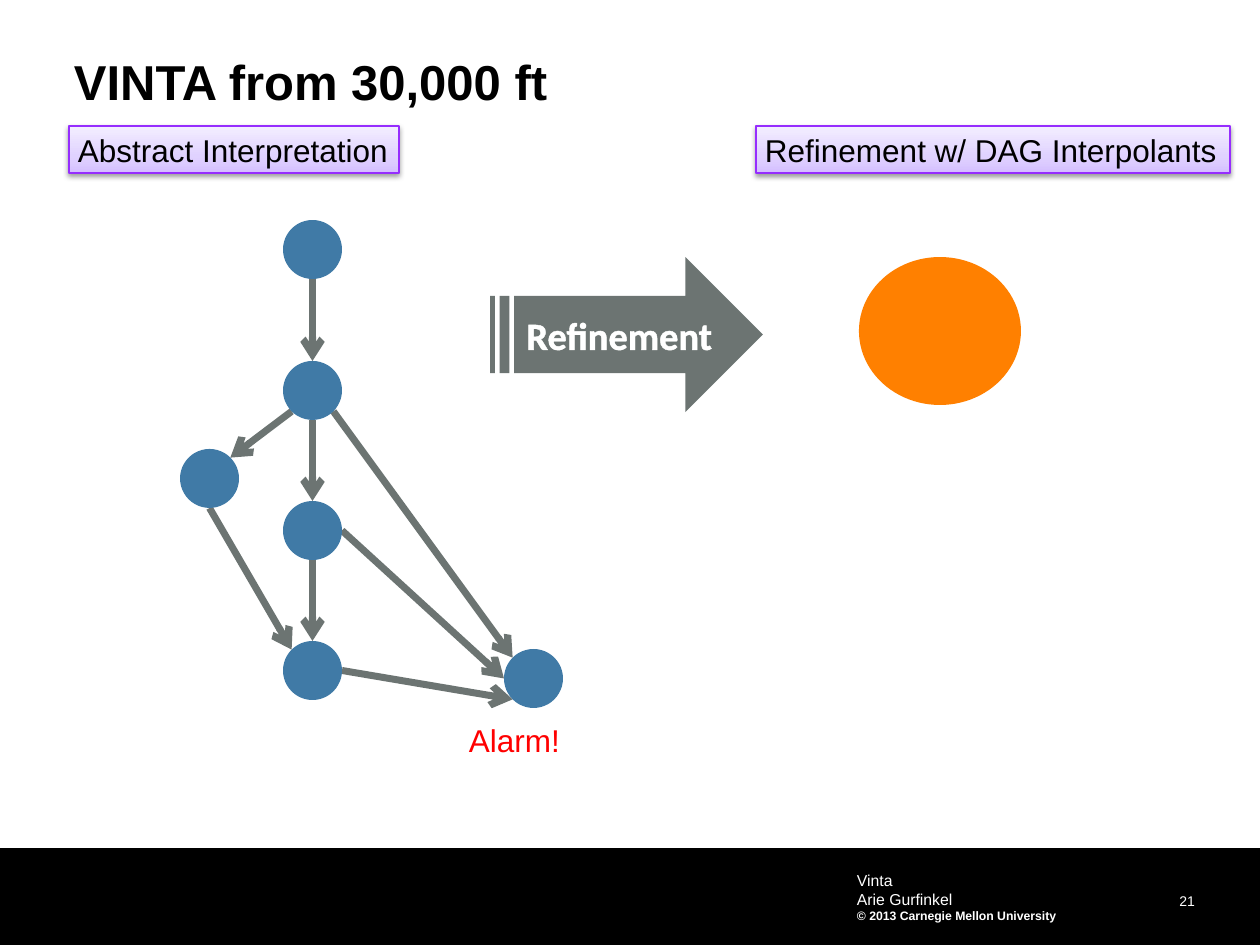
import math
from lxml import etree
from pptx import Presentation, util as u
from pptx.dml.color import RGBColor
from pptx.enum import shapes, text
from pptx.oxml import parse_xml
from pptx.oxml.ns import nsdecls, qn

PX = u.Inches(1) / 126
COLORS = {
    "black": "000000", "white": "FFFFFF", "red": "FF0000",
    "node": "407AA6", "gray": "6C7472", "orange": "FF8000",
    "violet": "962DFE",
}
LABEL_GRADIENT = [(0, "D4BFFF"), (35, "E0D2FF"), (100, "F3EEFF")]

TITLE = "VINTA from 30,000 ft"
LABELS = [
    ("Abstract Interpretation", (69, 126, 330, 47)),
    ("Refinement w/ DAG Interpolants", (756, 126, 474, 47)),
]
FOOTER = [("Vinta", 9, False), ("Arie Gurfinkel", 9, False),
          ("© 2013 Carnegie Mellon University", 7, True)]

NODE_SIZE = 59
NODES = {  # left, top
    "entry": (283, 220), "branch": (283, 361), "middle": (283, 501),
    "join": (283, 641), "side": (180, 449), "alarm": (504, 649),
}
# Rim points as degrees clockwise from the right of a node
RIGHT, LOWER_RIGHT, BOTTOM, LOWER_LEFT = 0, 45, 90, 135
LEFT, UPPER_LEFT, TOP, UPPER_RIGHT = 180, 225, 270, 315
EDGES = [
    ("entry", BOTTOM, "branch", TOP),
    ("branch", BOTTOM, "middle", TOP),
    ("middle", BOTTOM, "join", TOP),
    ("branch", LOWER_RIGHT, "alarm", UPPER_LEFT),
    ("middle", RIGHT, "alarm", LEFT),
    ("join", RIGHT, "alarm", LOWER_LEFT),
    ("branch", LOWER_LEFT, "side", UPPER_RIGHT),
    ("side", BOTTOM, "join", UPPER_LEFT),
]


def emu(*lengths):
    return [round(length * PX) for length in lengths]


def color(name):
    return RGBColor.from_string(COLORS[name])


def add_solid(slide, kind, box, fill):
    solid = slide.shapes.add_shape(kind, *emu(*box))
    solid.shadow.inherit = False
    solid.fill.solid()
    solid.fill.fore_color.rgb = color(fill)
    solid.line.fill.background()
    return solid


def write(shape, lines, ink="black", font="Arial", align=text.PP_ALIGN.LEFT,
          anchor=text.MSO_ANCHOR.TOP, insets=(9, 5), wrap=True, spacing=None):
    """Fill a shape with lines given as (wording, point size, bold)."""
    frame = shape.text_frame
    frame.word_wrap = wrap
    frame.vertical_anchor = anchor
    frame.margin_left, frame.margin_top = emu(*insets)
    frame.margin_right, frame.margin_bottom = emu(*insets)
    for i, (wording, size, bold) in enumerate(lines):
        paragraph = frame.paragraphs[0] if i == 0 else frame.add_paragraph()
        paragraph.alignment = align
        paragraph.line_spacing = spacing
        run = paragraph.add_run()
        run.text = wording
        run.font.name, run.font.size, run.font.bold = font, u.Pt(size), bold
        run.font.color.rgb = color(ink)


def add_text(slide, box, lines, **style):
    write(slide.shapes.add_textbox(*emu(*box)), lines, **style)


def add_label(slide, wording, box):
    label = add_solid(slide, shapes.MSO_SHAPE.RECTANGLE, box, "white")
    label.line.color.rgb = color("violet")
    label.line.width = u.Pt(0.75)
    stops = "".join(f'<a:gs pos="{pos * 1000}"><a:srgbClr val="{shade}"/></a:gs>'
                    for pos, shade in LABEL_GRADIENT)
    properties = label._element.spPr
    properties.replace(properties.find(qn("a:solidFill")), parse_xml(
        f'<a:gradFill {nsdecls("a")} rotWithShape="1"><a:gsLst>{stops}</a:gsLst>'
        '<a:lin ang="16200000" scaled="0"/></a:gradFill>'))
    properties.find(qn("a:effectLst")).append(parse_xml(
        f'<a:outerShdw {nsdecls("a")} blurRad="{u.Pt(3.1)}" dist="{u.Pt(1.6)}" '
        'dir="5400000" rotWithShape="0"><a:srgbClr val="000000">'
        '<a:alpha val="38000"/></a:srgbClr></a:outerShdw>'))
    write(label, [(wording, 18, False)], wrap=False)


def rim_point(node, degrees):
    radius = NODE_SIZE / 2
    angle = math.radians(degrees)
    left, top = NODES[node]
    return (left + radius + radius * math.cos(angle),
            top + radius + radius * math.sin(angle))


def add_edge(slide, source, leaving, target, entering):
    edge = slide.shapes.add_connector(
        shapes.MSO_CONNECTOR.STRAIGHT,
        *emu(*rim_point(source, leaving), *rim_point(target, entering)))
    edge.line.color.rgb = color("gray")
    edge.line.width = u.Pt(4)
    etree.SubElement(edge.line._get_or_add_ln(), qn("a:tailEnd"), type="arrow")
    etree.SubElement(edge._element.spPr, qn("a:effectLst"))


def outline_text(shape, ink):
    properties = shape.text_frame.paragraphs[0].runs[0].font._element
    properties.insert(0, parse_xml(
        f'<a:ln {nsdecls("a")} w="{u.Pt(0.75)}"><a:solidFill>'
        f'<a:srgbClr val="{COLORS[ink]}"/></a:solidFill></a:ln>'))


def main():
    deck = Presentation()
    deck.slide_width, deck.slide_height = emu(1260, 945)
    slide = deck.slides.add_slide(deck.slide_layouts[6])
    kinds, middle = shapes.MSO_SHAPE, text.MSO_ANCHOR.MIDDLE

    add_solid(slide, kinds.RECTANGLE, (0, 848, 1260, 97), "black")
    add_text(slide, (1079, 886, 116, 23), [("21", 8, False)], ink="white",
             align=text.PP_ALIGN.RIGHT, anchor=middle, insets=(0, 0),
             spacing=u.Pt(13))
    add_text(slide, (851, 864, 315, 66), FOOTER, ink="white", anchor=middle,
             insets=(6, 6))
    add_text(slide, (74, 58, 1124, 53), [(TITLE, 28, True)], insets=(0, 0),
             spacing=0.9)

    for edge in EDGES:
        add_edge(slide, *edge)
    for corner in NODES.values():
        add_solid(slide, kinds.OVAL, (*corner, NODE_SIZE, NODE_SIZE), "node")
    add_text(slide, (460, 716, 110, 47), [("Alarm!", 18, False)], ink="red",
             wrap=False)

    refinement = add_solid(slide, kinds.STRIPED_RIGHT_ARROW,
                           (490, 257, 273, 155), "gray")
    write(refinement, [("Refinement", 22, True)], ink="white", font="Calibri",
          align=text.PP_ALIGN.CENTER, anchor=middle)
    outline_text(refinement, "white")
    add_solid(slide, kinds.OVAL, (859, 257, 162, 148), "orange")
    for wording, box in LABELS:
        add_label(slide, wording, box)

    deck.save("out.pptx")


if __name__ == "__main__":
    main()
